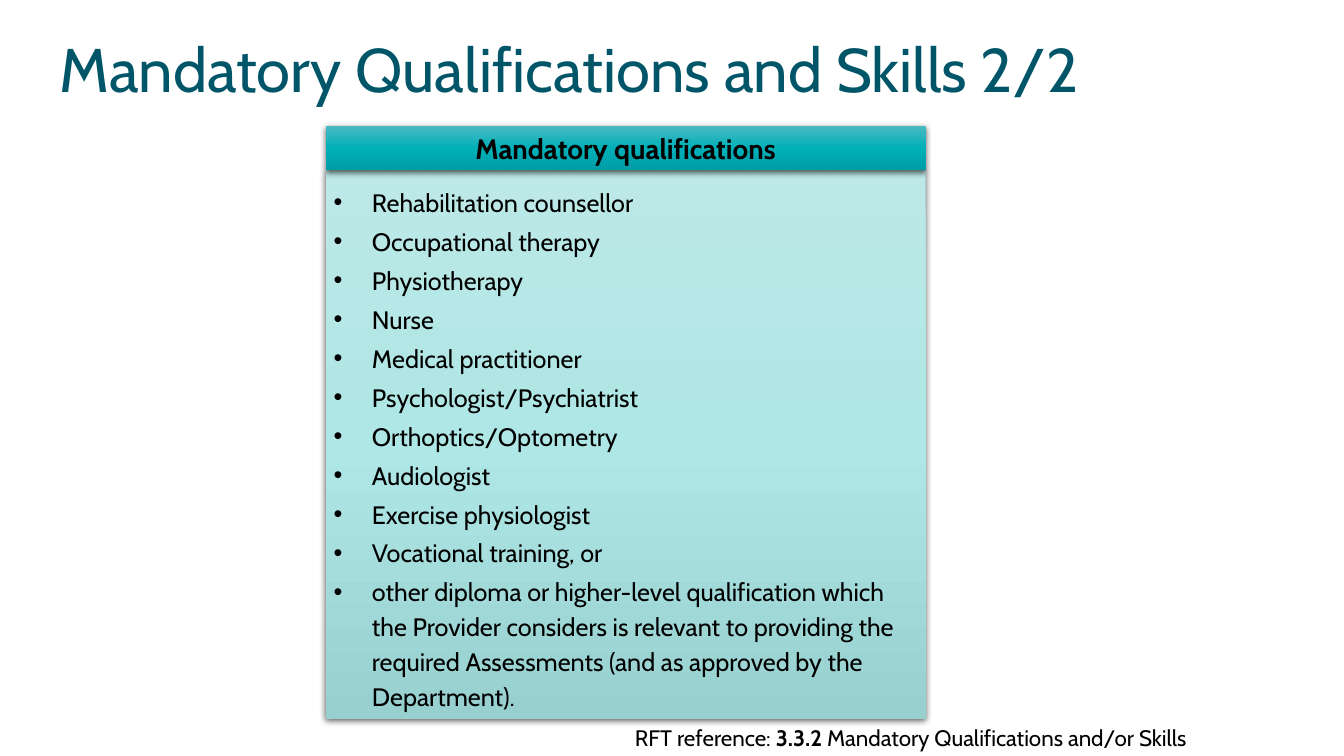
from dataclasses import dataclass

import pptx
import pptx.dml.color
import pptx.enum.shapes
import pptx.enum.text
import pptx.oxml
import pptx.oxml.ns
import pptx.util

ALIGN = pptx.enum.text.PP_ALIGN
ANCHOR = pptx.enum.text.MSO_ANCHOR


@dataclass(frozen=True)
class Theme:
    font: str = "Cabin"
    title_color: str = "005568"
    text_color: str = "000000"
    header_stops: tuple = ("4BB9C2", "00B0B9", "009CA4")
    body_stops: tuple = ("BCE8E7", "AEE7E5", "97D0CF")
    title_size: int = 44
    header_size: int = 20
    body_size: int = 18
    reference_size: int = 16


def drawing_xml(markup):
    return pptx.oxml.parse_xml(markup.replace(">", " " + pptx.oxml.ns.nsdecls("a") + ">", 1))


class SlideBuilder:
    """Adds elements to one slide; boxes are (left, top, width, height) in percent of the slide."""

    def __init__(self, prs, theme):
        self.prs = prs
        self.theme = theme
        self.s = prs.slides.add_slide(prs.slide_layouts[5])

    def box(self, left, top, width, height):
        w, h = self.prs.slide_width / 100, self.prs.slide_height / 100
        return int(left * w), int(top * h), int(width * w), int(height * h)

    def run(self, p, text, size, bold=False, color=None):
        r = p.add_run()
        r.text = text
        r.font.name = self.theme.font
        r.font.size = pptx.util.Pt(size)
        r.font.bold = bold
        r.font.color.rgb = pptx.dml.color.RGBColor.from_string(color or self.theme.text_color)

    def frame(self, sp, anchor, insets=(0.1, 0.05, 0.1, 0.05)):
        """Set wrapping, anchor and insets (left, top, right, bottom in inches)."""
        tf = sp.text_frame
        tf.word_wrap = True
        tf.auto_size = pptx.enum.text.MSO_AUTO_SIZE.NONE
        tf.vertical_anchor = anchor
        tf.margin_left, tf.margin_top, tf.margin_right, tf.margin_bottom = map(
            pptx.util.Inches, insets)
        return tf

    def title(self, box, text):
        sp = self.s.shapes.title
        sp.left, sp.top, sp.width, sp.height = self.box(*box)
        p = self.frame(sp, ANCHOR.BOTTOM, (0, 0, 0, 0)).paragraphs[0]
        p.alignment = ALIGN.LEFT
        self.run(p, text, self.theme.title_size, color=self.theme.title_color)

    def panel(self, box, stops):
        """Add a rectangle with a downward gradient and a soft shadow."""
        sp = self.s.shapes.add_shape(pptx.enum.shapes.MSO_SHAPE.RECTANGLE, *self.box(*box))
        sp.line.fill.background()
        sp.shadow.inherit = False
        marks = "".join(
            f'<a:gs pos="{i * 50000}"><a:srgbClr val="{c}"/></a:gs>' for i, c in enumerate(stops))
        sp_pr = sp.fill._xPr
        sp_pr.find(pptx.oxml.ns.qn("a:prstGeom")).addnext(drawing_xml(
            f'<a:gradFill><a:gsLst>{marks}</a:gsLst><a:lin ang="5400000" scaled="0"/></a:gradFill>'))
        sp_pr.find(pptx.oxml.ns.qn("a:effectLst")).append(drawing_xml(
            '<a:outerShdw blurRad="57150" dist="19050" dir="5400000" algn="ctr" rotWithShape="0">'
            '<a:srgbClr val="000000"><a:alpha val="63000"/></a:srgbClr></a:outerShdw>'))
        return sp

    def header(self, box, text):
        sp = self.panel(box, self.theme.header_stops)
        p = self.frame(sp, ANCHOR.MIDDLE).paragraphs[0]
        p.alignment = ALIGN.CENTER
        self.run(p, text, self.theme.header_size, bold=True)

    def bullet_list(self, box, items):
        sp = self.panel(box, self.theme.body_stops)
        tf = self.frame(sp, ANCHOR.TOP, (0.08, 0.12, 0.08, 0.16))
        indent = pptx.util.Inches(0.38)
        for i, item in enumerate(items):
            p = tf.add_paragraph() if i else tf.paragraphs[0]
            p_pr = p._p.get_or_add_pPr()
            p_pr.set("marL", str(indent))
            p_pr.set("indent", str(-indent))
            p_pr.append(drawing_xml('<a:buFont typeface="Arial"></a:buFont>'))
            p_pr.append(drawing_xml('<a:buChar char="•"></a:buChar>'))
            p.alignment = ALIGN.LEFT
            p.line_spacing = 1.15
            p.space_before = pptx.util.Pt(3 if i else 0)
            self.run(p, item, self.theme.body_size)

    def reference(self, box, parts):
        sp = self.s.shapes.add_textbox(*self.box(*box))
        p = self.frame(sp, ANCHOR.TOP).paragraphs[0]
        for text, bold in parts:
            self.run(p, text, self.theme.reference_size, bold)


QUALIFICATIONS = (
    "Rehabilitation counsellor",
    "Occupational therapy",
    "Physiotherapy",
    "Nurse",
    "Medical practitioner",
    "Psychologist/Psychiatrist",
    "Orthoptics/Optometry",
    "Audiologist",
    "Exercise physiologist",
    "Vocational training, or",
    "other diploma or higher-level qualification which the Provider considers is relevant to "
    "providing the required Assessments (and as approved by the Department).",
)


def main():
    prs = pptx.Presentation()
    prs.slide_width = pptx.util.Inches(13.33)
    prs.slide_height = pptx.util.Inches(7.5)
    slide = SlideBuilder(prs, Theme())
    left, top, width, header_height, body_height = 24.23, 16.67, 44.64, 5.87, 72.53
    slide.title((4.43, 4, 86.5, 9.87), "Mandatory Qualifications and Skills 2/2")
    slide.bullet_list((left, top + header_height, width, body_height), QUALIFICATIONS)
    slide.header((left, top, width, header_height), "Mandatory qualifications")
    slide.reference((46.51, 95.07, 46.14, 4.93), (
        ("RFT reference: ", False),
        ("3.3.2", True),
        (" Mandatory Qualifications and/or Skills", False),
    ))
    prs.save("out.pptx")


if __name__ == "__main__":
    main()
